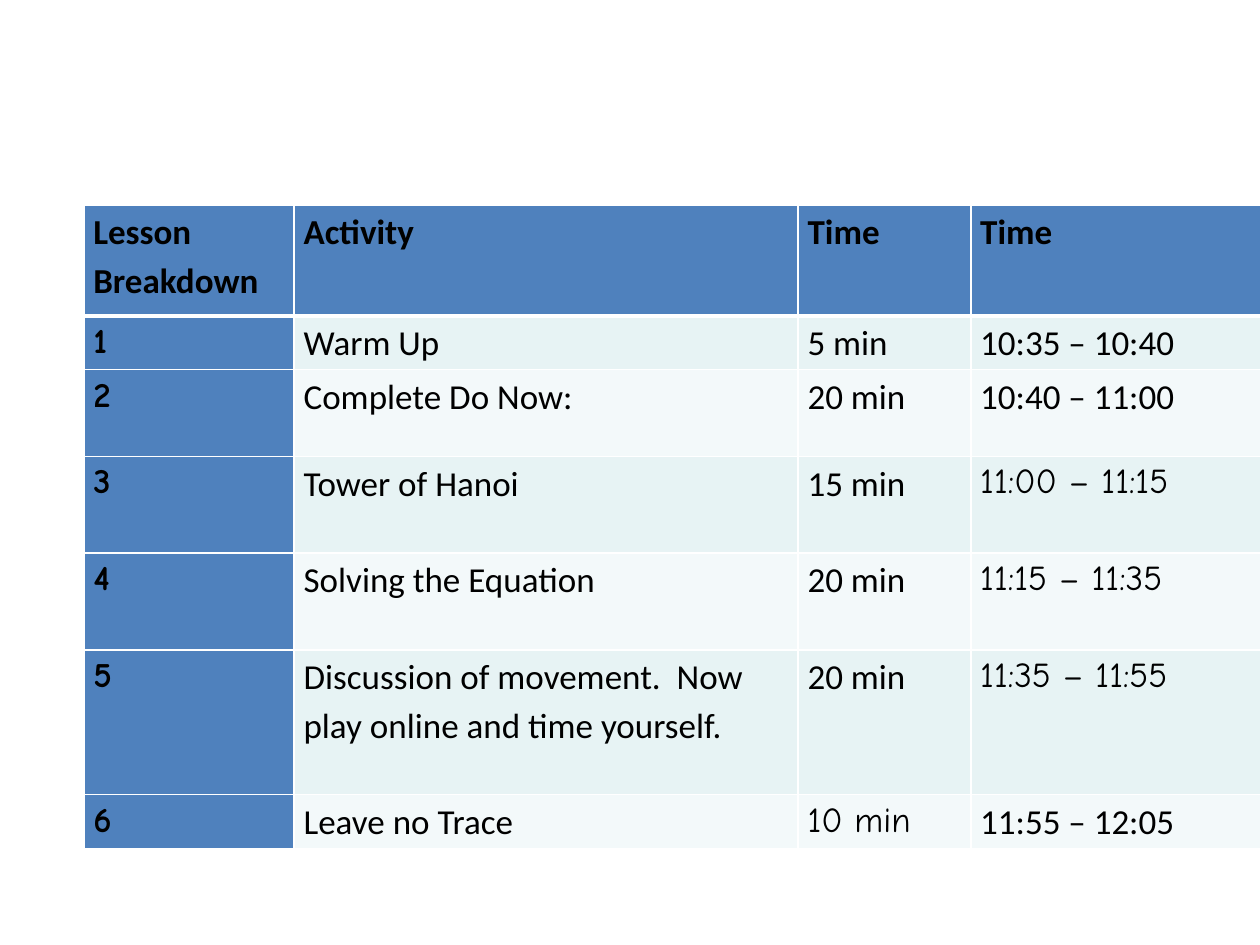
from lxml.etree import SubElement
from pptx import Presentation
from pptx.dml.color import RGBColor
from pptx.oxml import parse_xml
from pptx.oxml.ns import nsdecls
from pptx.util import Cm, Pt

HEADER = ("Lesson Breakdown", "Activity", "Time", "Time")
LESSONS = [
    ("1", "Warm Up", "5 min", "10:35 – 10:40"),
    ("2", "Complete Do Now:", "20 min", "10:40 – 11:00"),
    ("3", "Tower of Hanoi", "15 min", "11:00 – 11:15"),
    ("4", "Solving the Equation", "20 min", "11:15 – 11:35"),
    ("5", "Discussion of movement.  Now play online and time yourself.",
     "20 min", "11:35 – 11:55"),
    ("6", "Leave no Trace", "10 min", "11:55 – 12:05"),
]
COLUMN_WIDTHS = (4.24, 10.16, 3.48, 5.84)
ROW_HEIGHTS = (2.24, 1.08, 1.75, 1.95, 1.95, 2.92, 1.08)
COMIC_CELLS = {(3, 3), (4, 3), (5, 3), (6, 2)}
BLUE, BANDS = "4F81BD", ("F3F9FA", "E7F3F4")
WHITE, BLACK = "FFFFFF", "000000"


def paint(target, color):
    target.rgb = RGBColor.from_string(color)


def add_borders(cell, row):
    properties = cell._tc.get_or_add_tcPr()
    widths = {"L": 1, "R": 1, "T": 3 if row == 1 else 1, "B": 3 if row == 0 else 1}
    for position, (side, width) in enumerate(widths.items()):
        properties.insert(position, parse_xml(
            f'<a:ln{side} {nsdecls("a")} w="{Pt(width)}"><a:solidFill>'
            f'<a:srgbClr val="{WHITE}"/></a:solidFill></a:ln{side}>'))


def fill_cell(cell, text, row, column):
    is_label = row == 0 or column == 0
    is_comic = row > 0 and column == 0 or (row, column) in COMIC_CELLS
    cell.fill.solid()
    paint(cell.fill.fore_color, BLUE if is_label else BANDS[row % 2])
    cell.margin_left = cell.margin_right = Cm(0.19)
    cell.margin_top = cell.margin_bottom = 0
    cell.text_frame.text = text
    para = cell.text_frame.paragraphs[0]
    para.line_spacing = 1.15
    font = para.runs[0].font
    font.name = "Comic Neue" if is_comic else "Calibri"
    font.size, font.bold = Pt(20), is_label
    paint(font.color, BLACK)
    add_borders(cell, row)


def main():
    """Build the lesson timetable slide."""
    deck = Presentation()
    deck.slide_width, deck.slide_height = Cm(25.4), Cm(19.05)
    page = deck.slides.add_slide(deck.slide_layouts[6])
    rows = [HEADER] + LESSONS
    table = page.shapes.add_table(
        len(rows), len(HEADER), Cm(1.69), Cm(4.13),
        Cm(sum(COLUMN_WIDTHS)), Cm(sum(ROW_HEIGHTS))).table
    for column, width in zip(table.columns, COLUMN_WIDTHS):
        column.width = Cm(width)
    for row, height in zip(table.rows, ROW_HEIGHTS):
        row.height = Cm(height)
    for row, texts in enumerate(rows):
        for column, text in enumerate(texts):
            fill_cell(table.cell(row, column), text, row, column)
    deck.save("out.pptx")


if __name__ == "__main__":
    main()
